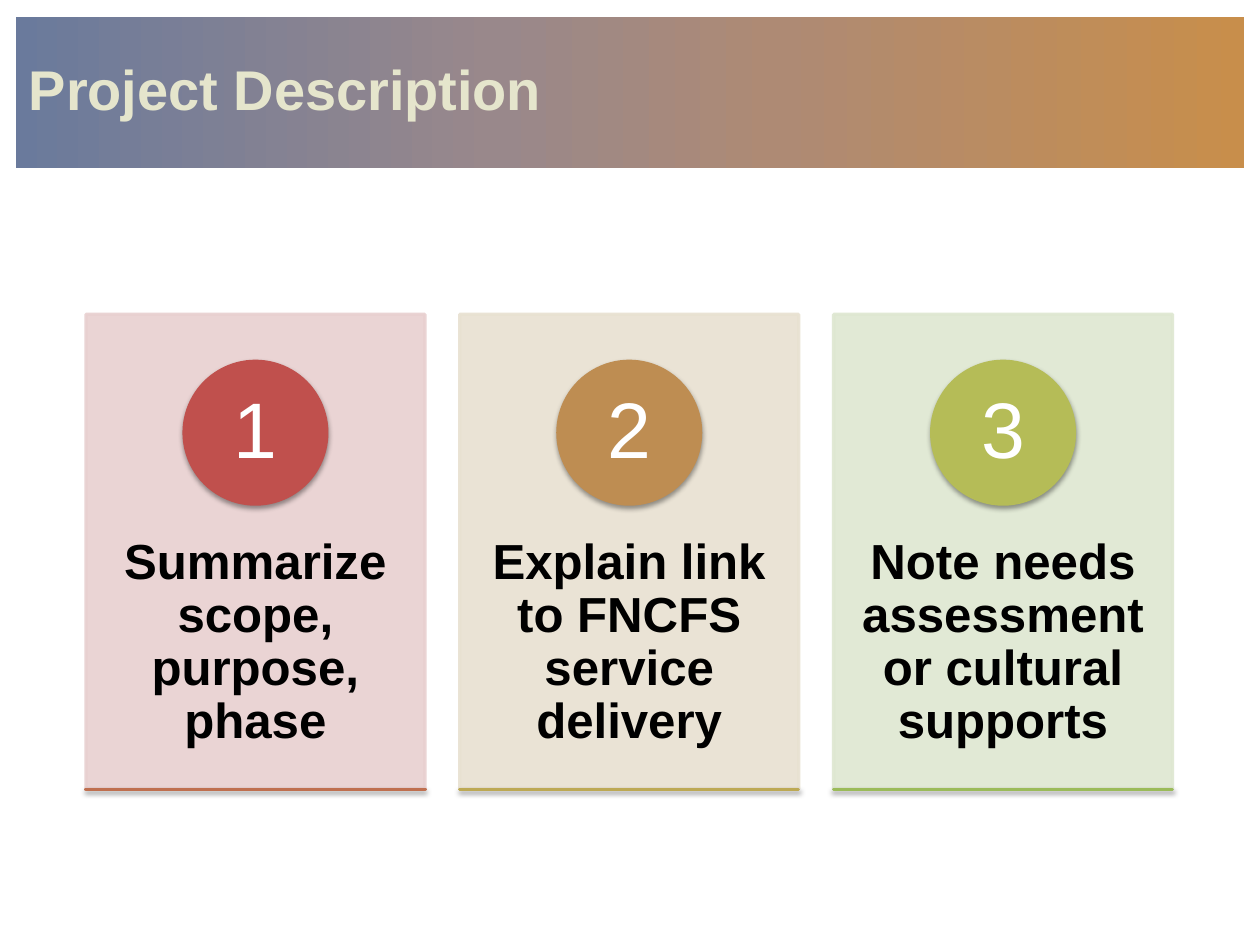
from dataclasses import dataclass

from lxml.etree import SubElement
from pptx import Presentation
from pptx.dml.color import RGBColor
from pptx.enum.shapes import MSO_SHAPE
from pptx.enum.text import MSO_ANCHOR, MSO_AUTO_SIZE, PP_ALIGN
from pptx.oxml.ns import qn
from pptx.util import Cm, Pt


@dataclass(frozen=True)
class Theme:
    """Colours, font and type sizes of the slide."""

    font: str = "Arial"
    head: str = "E5E5CC"
    ink: str = "000000"
    white: str = "FFFFFF"
    band: tuple = ((0, "6A7A9C"), (39, "99888B"), (62, "AE8A74"), (100, "C88E4B"))
    cards: tuple = ("E8D0D0", "E8E1D1", "DEE7D1")
    discs: tuple = ("C0504D", "BE8D52", "B5BC57")
    bars: tuple = ("BF6F4F", "BDA954", "9BBB59")
    title: float = 34.1
    body: float = 30
    digit: float = 48


THEME = Theme()
STEPS = (
    "Summarize scope, purpose, phase",
    "Explain link to FNCFS service delivery",
    "Note needs assessment or cultural supports",
)
LEFT, TOP, WIDE, HIGH, PITCH = 1.85, 6.76, 7.29, 10.21, 8.04
DISC, DROP = 3.07, 1.01


def add_node(parent, tag, **attrs):
    """Append an XML child with the given attributes."""
    return SubElement(parent, qn(tag), {k: str(v) for k, v in attrs.items()})


def write(shape, text, size, tint, bold, align, anchor, pads):
    """Set the text of a shape with its type and insets in cm."""
    frame = shape.text_frame
    frame.text = text
    frame.word_wrap = True
    frame.auto_size = MSO_AUTO_SIZE.NONE
    frame.vertical_anchor = anchor
    frame.margin_left = frame.margin_right = Cm(pads[0])
    frame.margin_top, frame.margin_bottom = Cm(pads[1]), Cm(pads[2])
    para = frame.paragraphs[0]
    para.alignment = align
    para.line_spacing = 0.9
    font = para.runs[0].font
    font.name, font.size, font.bold = THEME.font, Pt(size), bold
    font.color.rgb = RGBColor.from_string(tint)


def add_block(slide, kind, box, tint):
    """Add a preset shape with fill and line of one colour."""
    shape = slide.shapes.add_shape(kind, *map(Cm, box))
    shape.fill.solid()
    shape.fill.fore_color.rgb = RGBColor.from_string(tint)
    shape.line.color.rgb = RGBColor.from_string(tint)
    shape.line.width = Pt(2)
    shape.shadow.inherit = False
    return shape


def fade(shape):
    """Make fill and line of a shape 90 percent opaque."""
    for tint in shape._element.spPr.iter(qn("a:srgbClr")):
        add_node(tint, "a:alpha", val=90000)


def cast(shape):
    """Give a shape a soft shadow below it."""
    effect = shape._element.spPr.find(qn("a:effectLst"))
    shade = add_node(effect, "a:outerShdw", blurRad=Pt(3.1), dist=Pt(1.6),
                     dir=5400000, rotWithShape=0)
    tint = add_node(shade, "a:srgbClr", val=THEME.ink)
    add_node(tint, "a:alpha", val=38000)


def add_title(slide, text):
    """Place the title on its gradient band."""
    title = slide.shapes.title
    title.left, title.top = Cm(0.34), Cm(0.37)
    title.width, title.height = Cm(26.42), Cm(3.25)
    grad = add_node(title._element.spPr, "a:gradFill", rotWithShape=1)
    stops = add_node(grad, "a:gsLst")
    for place, tint in THEME.band:
        stop = add_node(stops, "a:gs", pos=place * 1000)
        add_node(stop, "a:srgbClr", val=tint)
    add_node(grad, "a:lin", ang=0, scaled=0)
    write(title, text, THEME.title, THEME.head, True,
          PP_ALIGN.LEFT, MSO_ANCHOR.MIDDLE, (0.28, 0.13, 0.13))


def add_card(slide, index, text):
    """Add one step: card, numbered disc and base bar."""
    left = LEFT + index * PITCH
    card = add_block(slide, MSO_SHAPE.RECTANGLE, (left, TOP, WIDE, HIGH),
                     THEME.cards[index])
    fade(card)
    write(card, text, THEME.body, THEME.ink, True,
          PP_ALIGN.CENTER, MSO_ANCHOR.TOP, (0.56, 4.78, 0.91))
    inset = (WIDE - DISC) / 2
    disc = add_block(slide, MSO_SHAPE.OVAL,
                     (left + inset, TOP + DROP, DISC, DISC), THEME.discs[index])
    cast(disc)
    write(disc, str(index + 1), THEME.digit, THEME.white, False,
          PP_ALIGN.CENTER, MSO_ANCHOR.MIDDLE, (0.23, 0.03, 0.03))
    bar = add_block(slide, MSO_SHAPE.RECTANGLE, (left, TOP + HIGH, WIDE, 0),
                    THEME.bars[index])
    cast(bar)


def main():
    """Build and save the slide."""
    deck = Presentation()
    deck.slide_width, deck.slide_height = Cm(27.1), Cm(20.32)
    slide = deck.slides.add_slide(deck.slide_layouts[5])
    add_title(slide, "Project Description")
    for index, text in enumerate(STEPS):
        add_card(slide, index, text)
    deck.save("out.pptx")


if __name__ == "__main__":
    main()
